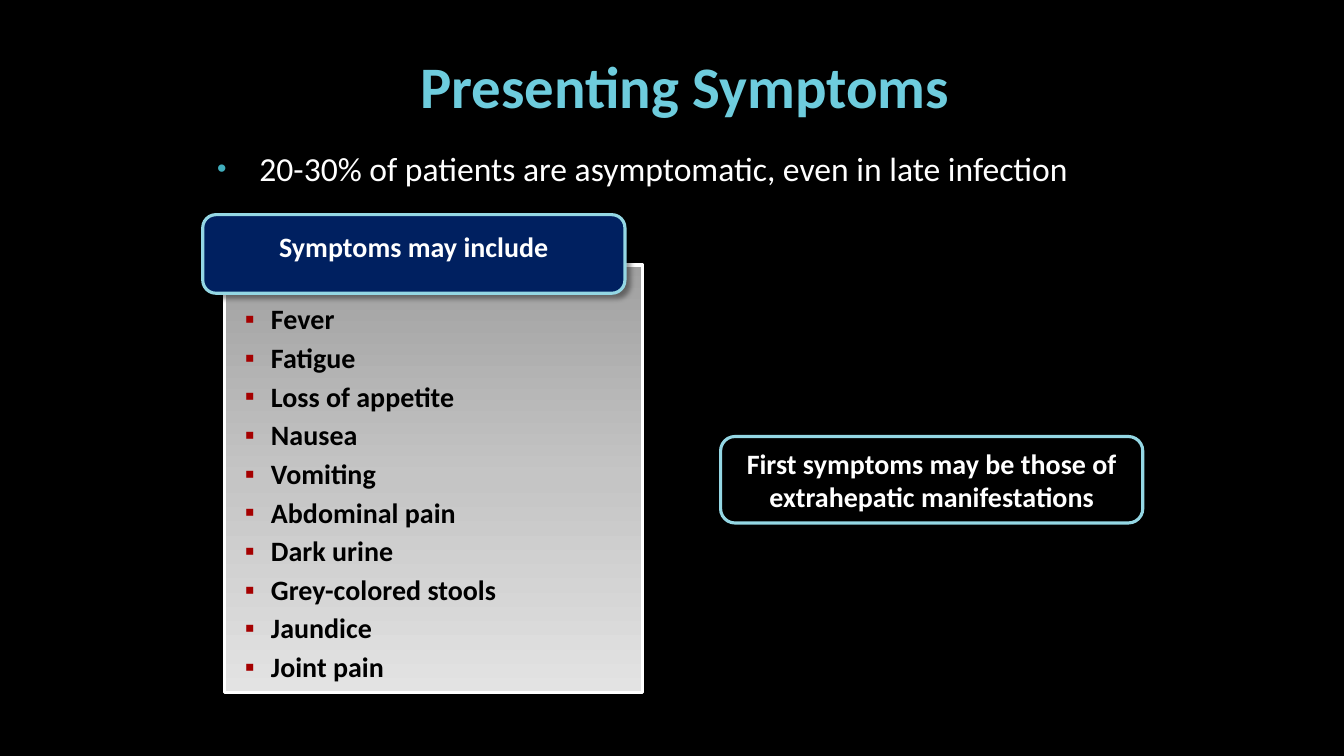
from lxml.etree import SubElement as Sub
from pptx import Presentation
from pptx.dml.color import RGBColor
from pptx.enum.shapes import MSO_SHAPE as Geom
from pptx.enum.text import MSO_ANCHOR as Anchor, PP_ALIGN as Align
from pptx.oxml import parse_xml
from pptx.oxml.ns import nsdecls, qn
from pptx.util import Cm, Pt

BLACK, WHITE, TEAL, NAVY, SKY = "000000", "FFFFFF", "6ECCDD", "002060", "94D7E4"


def color(code):
    return RGBColor.from_string(code)


class Deck:
    font = "Calibri"

    def __init__(self, wide, high, back):
        self.prs = Presentation()
        self.prs.slide_width, self.prs.slide_height = Cm(wide), Cm(high)
        self.slide = self.prs.slides.add_slide(self.prs.slide_layouts[6])
        fill = self.slide.background.fill
        fill.solid()
        fill.fore_color.rgb = color(back)

    def frame(self, shape, anchor, inset=(0.25, 0.13, 0.25, 0.13)):
        frame = shape.text_frame
        frame.word_wrap = True
        frame.vertical_anchor = anchor
        (frame.margin_left, frame.margin_top,
         frame.margin_right, frame.margin_bottom) = map(Cm, inset)
        return frame

    def style(self, para, text, size, ink, bold=False, align=Align.LEFT):
        para.text = text
        para.alignment = align
        font = para.font
        font.name, font.size, font.bold = self.font, Pt(size), bold
        font.color.rgb = color(ink)

    def bullet(self, para, mark, ink, left, hang, scale=100):
        props = para._p.get_or_add_pPr()
        props.set("marL", str(Cm(left)))
        props.set("indent", str(-Cm(hang)))
        tint = Sub(props, qn("a:buClr"))
        Sub(tint, qn("a:srgbClr"), val=ink)
        Sub(props, qn("a:buSzPct"), val=str(scale * 1000))
        Sub(props, qn("a:buFont"), typeface="Arial")
        Sub(props, qn("a:buChar"), char=mark)

    def text(self, place, anchor):
        box = self.slide.shapes.add_textbox(*map(Cm, place))
        return self.frame(box, anchor).paragraphs[0]

    def shape(self, kind, place, edge):
        shape = self.slide.shapes.add_shape(kind, *map(Cm, place))
        shape.shadow.inherit = False
        shape.line.color.rgb = color(edge)
        shape.line.width = Pt(2.25)
        return shape

    def label(self, place, fill, text, anchor, top=0.13):
        shape = self.shape(Geom.FLOWCHART_ALTERNATE_PROCESS, place, SKY)
        shape.fill.solid()
        shape.fill.fore_color.rgb = color(fill)
        self.shade(shape)
        frame = self.frame(shape, anchor, (0.25, top, 0.25, 0.13))
        self.style(frame.paragraphs[0], text, 20, WHITE, True, Align.CENTER)

    def shade(self, shape):
        effect = shape._element.spPr.find(qn("a:effectLst"))
        drop = Sub(effect, qn("a:outerShdw"), blurRad=str(Pt(4)),
                   dist=str(Pt(3)), dir=str(45 * 60000), algn="tl", rotWithShape="0")
        tint = Sub(drop, qn("a:srgbClr"), val=BLACK)
        Sub(tint, qn("a:alpha"), val="40000")

    def blend(self, shape, stops):
        grad = parse_xml(f'<a:gradFill {nsdecls("a")} rotWithShape="1"/>')
        steps = Sub(grad, qn("a:gsLst"))
        for spot, code in stops:
            stop = Sub(steps, qn("a:gs"), pos=str(spot * 1000))
            Sub(stop, qn("a:srgbClr"), val=code)
        Sub(grad, qn("a:lin"), ang=str(90 * 60000), scaled="0")
        shape._element.spPr.find(qn("a:prstGeom")).addnext(grad)

    def outline(self, para, ink, width):
        line = parse_xml(f'<a:ln {nsdecls("a")} w="{Pt(width)}"><a:solidFill>'
                         f'<a:srgbClr val="{ink}"/></a:solidFill></a:ln>')
        para._p.pPr.find(qn("a:defRPr")).insert(0, line)

    def list(self, place, items):
        panel = self.shape(Geom.RECTANGLE, place, WHITE)
        self.blend(panel, [(0, "A0A0A0"), (50, "C5C5C5"), (100, "E3E3E3")])
        frame = self.frame(panel, Anchor.TOP, (0.51, 1.02, 0.25, 0.25))
        for rank, item in enumerate(items):
            para = frame.add_paragraph() if rank else frame.paragraphs[0]
            para.line_spacing = 0.9
            if rank:
                para.space_before = Pt(6)
            self.bullet(para, "▪", "A50000", 0.66, 0.66)
            self.style(para, item, 20, BLACK, True)


def main():
    deck = Deck(33.87, 19.05, BLACK)

    # Title
    title = deck.text((0.28, 0.97, 32.61, 2.36), Anchor.MIDDLE)
    title._p.get_or_add_pPr().set("marL", str(Cm(1.35)))
    deck.style(title, "Presenting Symptoms", 42, TEAL, True, Align.CENTER)
    deck.outline(title, "2D7983", 0.5)

    # Lead statement
    lead = deck.text((5.05, 3.61, 23.24, 13.26), Anchor.TOP)
    deck.bullet(lead, "•", "41AEBD", 1.24, 1.07, 80)
    deck.style(lead, "20-30% of patients are asymptomatic, even in late infection",
               24, WHITE)

    # Symptom list under its heading
    deck.list((5.66, 6.68, 10.54, 10.77), [
        "Fever", "Fatigue", "Loss of appetite", "Nausea", "Vomiting",
        "Abdominal pain", "Dark urine", "Grey-colored stools", "Jaundice",
        "Joint pain"])
    deck.label((5.11, 5.41, 10.64, 1.98), NAVY, "Symptoms may include",
               Anchor.TOP, 0.27)

    # Side remark
    deck.label((18.16, 11, 10.64, 2.18), BLACK,
               "First symptoms may be those of extrahepatic manifestations",
               Anchor.MIDDLE)

    deck.prs.save("out.pptx")


if __name__ == "__main__":
    main()
